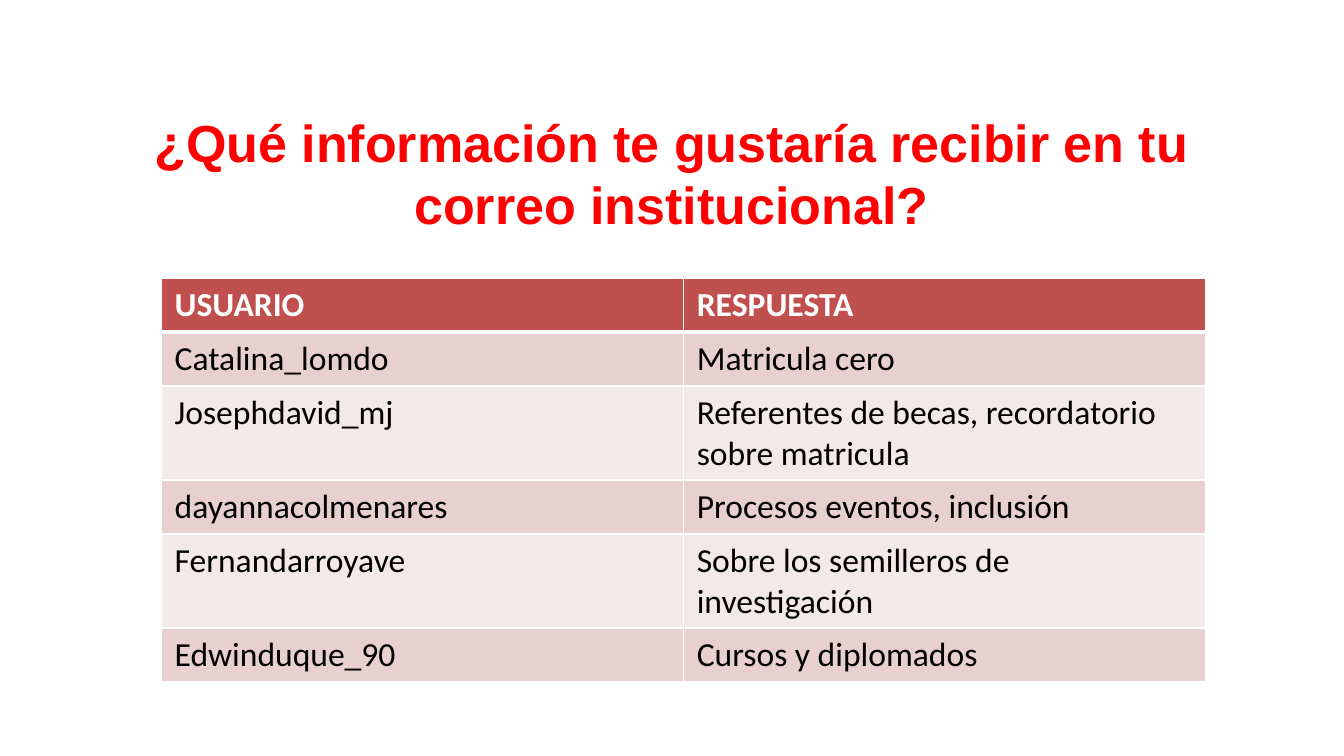
"""Builds a slide with a question and a table of user answers."""
from lxml.etree import SubElement
from pptx import Presentation
from pptx.dml.color import RGBColor
from pptx.enum.text import MSO_ANCHOR, PP_ALIGN
from pptx.oxml.ns import qn
from pptx.util import Inches, Pt

TITLE = "¿Qué información te gustaría recibir en tu\vcorreo institucional?"
ROWS = [
    ("USUARIO", "RESPUESTA"),
    ("Catalina_lomdo", "Matricula cero"),
    ("Josephdavid_mj", "Referentes de becas, recordatorio sobre matricula"),
    ("dayannacolmenares", "Procesos eventos, inclusión"),
    ("Fernandarroyave", "Sobre los semilleros de investigación"),
    ("Edwinduque_90", "Cursos y diplomados"),
]
COLORS = {
    "title": "FF0000",
    "header": "C0504D",
    "odd": "E8D0D0",
    "even": "F4E9E9",
    "white": "FFFFFF",
    "black": "000000",
}
SLIDE_WIDTH = 10
SLIDE_HEIGHT = SLIDE_WIDTH * 9 / 16
TITLE_BOX = (0.73, 0.83, 8.53, 0.92)
TABLE_BOX = (1.2, 2.07, 7.77, 3)
SINGLE_ROW, DOUBLE_ROW = 0.39, 0.67
LINE_CAPACITY = 35


def write_text(frame, text, *, font, size, color, bold=False, align=PP_ALIGN.LEFT, spacing=None):
    """Fill a text frame with one formatted paragraph."""
    frame.word_wrap = True
    paragraph = frame.paragraphs[0]
    paragraph.text = text
    paragraph.alignment = align
    paragraph.line_spacing = spacing
    for run in paragraph.runs:
        run.font.name = font
        run.font.size = Pt(size)
        run.font.bold = bold
        run.font.color.rgb = RGBColor.from_string(COLORS[color])


def set_borders(cell, widths):
    """Draw white cell borders of the given widths, ahead of the fill."""
    properties = cell._tc.get_or_add_tcPr()
    for position, (side, width) in enumerate(widths.items()):
        line = SubElement(properties, qn(f"a:{side}"), w=str(Pt(width)))
        fill = SubElement(line, qn("a:solidFill"))
        SubElement(fill, qn("a:srgbClr"), val=COLORS["white"])
        properties.insert(position, line)


def add_title(slide):
    """Add the centred question."""
    frame = slide.shapes.add_textbox(*map(Inches, TITLE_BOX)).text_frame
    frame.vertical_anchor = MSO_ANCHOR.MIDDLE
    write_text(frame, TITLE, font="Arial", size=27.9, color="title", bold=True,
               align=PP_ALIGN.CENTER, spacing=Pt(33.2))


def add_answers(slide):
    """Add the table with a header and banded rows."""
    shape = slide.shapes.add_table(len(ROWS), len(ROWS[0]), *map(Inches, TABLE_BOX))
    table = shape.table
    for index, values in enumerate(ROWS):
        wraps = len(values[-1]) > LINE_CAPACITY
        table.rows[index].height = Inches(DOUBLE_ROW if wraps else SINGLE_ROW)
        header = index == 0
        band = "header" if header else ("odd" if index % 2 else "even")
        widths = {"lnL": 1, "lnR": 1, "lnT": 3 if index == 1 else 1, "lnB": 3 if header else 1}
        for cell, value in zip(table.rows[index].cells, values):
            write_text(cell.text_frame, value, font="Calibri", size=18,
                       color="white" if header else "black", bold=header)
            cell.fill.solid()
            cell.fill.fore_color.rgb = RGBColor.from_string(COLORS[band])
            set_borders(cell, widths)
    shape.height = Inches(TABLE_BOX[-1])


def main():
    """Create and save the presentation."""
    presentation = Presentation()
    presentation.slide_width = Inches(SLIDE_WIDTH)
    presentation.slide_height = Inches(SLIDE_HEIGHT)
    slide = presentation.slides.add_slide(presentation.slide_layouts[6])
    add_title(slide)
    add_answers(slide)
    presentation.save("out.pptx")


if __name__ == "__main__":
    main()
